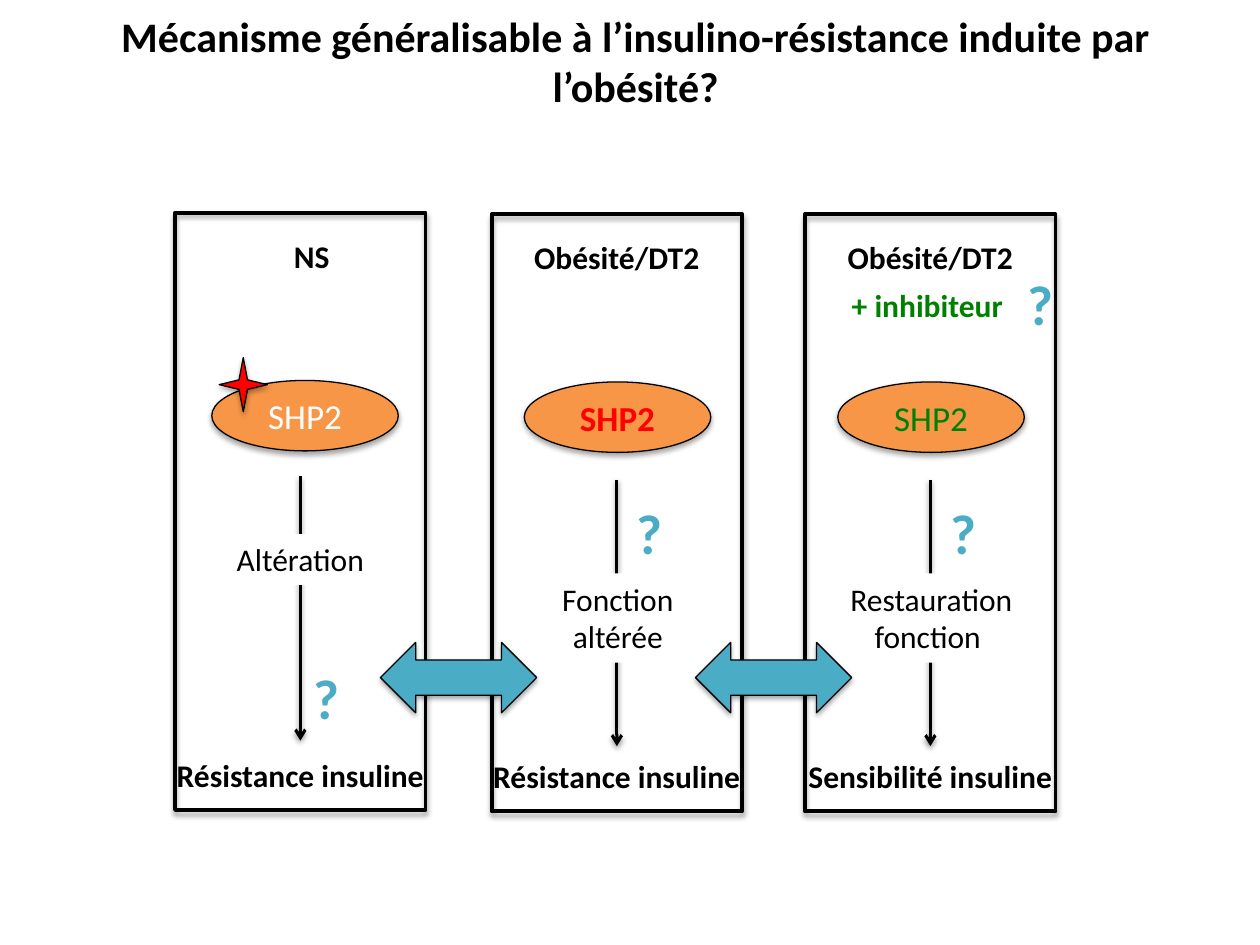
from lxml import etree
from pptx import Presentation
from pptx import util as u
from pptx.dml.color import RGBColor
from pptx.enum import shapes, text
from pptx.oxml import parse_xml
from pptx.oxml.ns import nsdecls, qn

Cm, Pt = u.Cm, u.Pt
SHAPE = shapes.MSO_SHAPE
COLORS = {"black": "000000", "white": "FFFFFF", "orange": "F79646",
          "red": "FF0000", "green": "008000", "teal": "4BACC6"}

PANEL_W, PANEL_H = 5.05, 12.04
RESULT_W = 5.6
LINE_H = 1.02

PANELS = [
    {"box": (3.53, 4.29), "heading": "NS", "heading_dx": 0.23,
     "protein": {"color": "white"}, "protein_dx": 0.74, "mutated": True,
     "arrow": (5.31, 10.64), "effect": "Altération",
     "effect_box": (0, 6.48, 5.05, 1.02),
     "question": (2.54, 8.97), "result": "Résistance insuline"},
    {"box": (9.91, 4.32), "heading": "Obésité/DT2",
     "protein": {"color": "red", "bold": True},
     "effect": "Fonction altérée", "result": "Résistance insuline"},
    {"box": (16.23, 4.32), "heading": "Obésité/DT2",
     "protein": {"color": "green"}, "treatment": "+ inhibiteur",
     "effect": "Restauration fonction ", "result": "Sensibilité insuline"},
]
DEFAULTS = {"heading_dx": 0, "protein_dx": 0.66, "mutated": False,
            "arrow": (5.36, 10.72), "effect_box": (0.36, 7.24, 4.37, 1.8),
            "question": (2.67, 5.61), "treatment": None}


def rgb(name):
    return RGBColor.from_string(COLORS[name])


def add_shadow(sp, dist=1.8, alpha=35):
    effects = sp._element.spPr.find(qn("a:effectLst"))
    if effects is not None:
        sp._element.spPr.remove(effects)
    sp._element.spPr.append(parse_xml(
        f'<a:effectLst {nsdecls("a")}><a:outerShdw blurRad="{Pt(3.1)}" '
        f'dist="{Pt(dist)}" dir="5400000" rotWithShape="0">'
        f'<a:srgbClr val="{COLORS["black"]}"><a:alpha val="{alpha * 1000}"/>'
        '</a:srgbClr></a:outerShdw></a:effectLst>'))


def write(sp, words, color="black", **formats):
    tf = sp.text_frame
    p = tf.paragraphs[0]
    p.alignment = text.PP_ALIGN.CENTER
    r = p.add_run()
    r.text = words
    r.font.color.rgb = rgb(color)
    for name, value in {"name": "Calibri", "size": Pt(18), **formats}.items():
        setattr(r.font, name, value)


def add_label(s, words, x, y, w, h=LINE_H, wrap=False, fill=None, **formats):
    sp = s.shapes.add_textbox(Cm(x), Cm(y), Cm(w), Cm(h))
    if fill:
        sp.fill.solid()
        sp.fill.fore_color.rgb = rgb(fill)
    sp.text_frame.word_wrap = wrap
    sp.text_frame.auto_size = text.MSO_AUTO_SIZE.SHAPE_TO_FIT_TEXT
    write(sp, words, **formats)


def add_question(s, x, y):
    add_label(s, "?", x, y, 1.04, 1.63, color="teal", size=Pt(32), bold=True)


def add_figure(s, kind, x, y, w, h, fill=None, line=0.75):
    """Outlined preset shape with a soft shadow; no fill when fill is None."""
    sp = s.shapes.add_shape(kind, Cm(x), Cm(y), Cm(w), Cm(h))
    if fill:
        sp.fill.solid()
        sp.fill.fore_color.rgb = rgb(fill)
    else:
        sp.fill.background()
    sp.line.color.rgb = rgb("black")
    sp.line.width = Pt(line)
    add_shadow(sp)
    return sp


def add_arrow(s, x, top, bottom):
    c = s.shapes.add_connector(shapes.MSO_CONNECTOR.STRAIGHT,
                               Cm(x), Cm(top), Cm(x), Cm(bottom))
    c.line.color.rgb = rgb("black")
    c.line.width = Pt(1.75)
    etree.SubElement(c.line._get_or_add_ln(), qn("a:tailEnd"), type="arrow")
    add_shadow(c, dist=1.6, alpha=38)


def add_panel(s, panel):
    d = {**DEFAULTS, **panel}
    x, y = d["box"]
    protein = add_figure(s, SHAPE.OVAL, x + d["protein_dx"], y + 3.38,
                         3.76, 1.42, "orange")
    protein.text_frame.vertical_anchor = text.MSO_ANCHOR.MIDDLE
    write(protein, "SHP2", size=Pt(20), **d["protein"])
    if d["mutated"]:
        add_figure(s, SHAPE.STAR_4_POINT, x + 0.89, y + 2.92, 0.97, 1.09, "red")

    add_arrow(s, x + PANEL_W / 2, *(y + dy for dy in d["arrow"]))
    dx, dy, w, h = d["effect_box"]
    add_label(s, d["effect"], x + dx, y + dy, w, h, wrap=True, fill="white")
    add_label(s, d["heading"], x + d["heading_dx"], y + 0.36, PANEL_W, bold=True)
    add_label(s, d["result"], x + (PANEL_W - RESULT_W) / 2, y + 10.82,
              RESULT_W, bold=True)
    add_figure(s, SHAPE.RECTANGLE, x, y, PANEL_W, PANEL_H, line=2.25)

    dx, dy = d["question"]
    add_question(s, x + dx, y + dy)
    if d["treatment"]:
        add_label(s, d["treatment"], x + 0.66, y + 1.32, 3.61,
                  color="green", bold=True)
        add_question(s, x + 4.22, y + 0.99)


def add_comparison(s, left_box, right_box):
    """Double arrow centred on the gap between two panels."""
    w, h = 3.15, 1.42
    middle = (left_box[0] + PANEL_W + right_box[0]) / 2
    add_figure(s, SHAPE.LEFT_RIGHT_ARROW, middle - w / 2, 12.95, w, h, "teal")


def main():
    prs = Presentation()
    prs.slide_width, prs.slide_height = Cm(25.4), Cm(19.05)
    s = prs.slides.add_slide(prs.slide_layouts[6])
    for panel in PANELS:
        add_panel(s, panel)
    for left, right in zip(PANELS, PANELS[1:]):
        add_comparison(s, left["box"], right["box"])
    add_label(s, "Mécanisme généralisable à l’insulino-résistance induite par "
              "l’obésité?", 0.94, 0.08, 23.75, 2.31, wrap=True,
              size=Pt(24), bold=True)
    prs.save("out.pptx")


if __name__ == "__main__":
    main()
